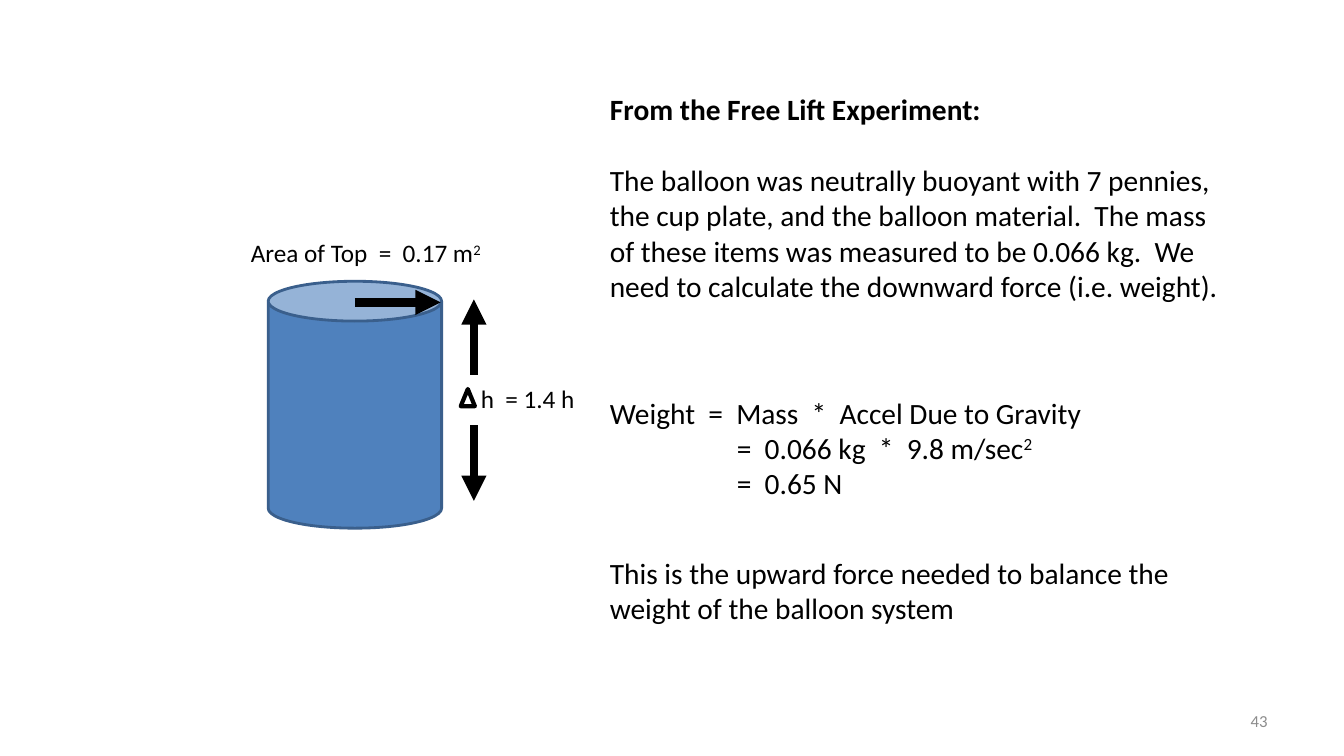
import pptx
import pptx.util
import pptx.dml.color
import pptx.enum.shapes
import pptx.enum.text
import pptx.oxml.ns
import lxml.etree

Inches = pptx.util.Inches
Pt = pptx.util.Pt
SHAPES = pptx.enum.shapes.MSO_SHAPE
ALIGN = pptx.enum.text.PP_ALIGN
ANCHOR = pptx.enum.text.MSO_ANCHOR

COLORS = {"ink": "000000", "cylinder": "4F81BD", "outline": "3A5F8C", "number": "8C8C8C"}
FONT = "Calibri"


def rgb(name):
    """Return the named colour."""
    return pptx.dml.color.RGBColor.from_string(COLORS[name])


def write(frame, lines, size, color="ink", bold=False, align=ALIGN.LEFT, anchor=ANCHOR.TOP):
    """Fill a text frame; the part of a line after a caret is superscript."""
    frame.word_wrap = True
    frame.vertical_anchor = anchor
    frame.text = "\n".join(line.partition("^")[0] for line in lines)
    for paragraph, line in zip(frame.paragraphs, lines):
        paragraph.alignment = align
        exponent = line.partition("^")[2]
        if exponent:
            raised = paragraph.add_run()
            raised.text = exponent
            raised._r.get_or_add_rPr().set("baseline", "30000")
        for run in paragraph.runs:
            run.font.name = FONT
            run.font.size = Pt(size)
            run.font.bold = bold
            run.font.color.rgb = rgb(color)


def add_text(shapes, box, lines, size, **style):
    """Add a text box at box and return its frame."""
    frame = shapes.add_textbox(*map(Inches, box)).text_frame
    write(frame, lines, size, **style)
    return frame


def add_arrow(shapes, start, end):
    """Add a thick black arrow from start to end."""
    arrow = shapes.add_connector(
        pptx.enum.shapes.MSO_CONNECTOR.STRAIGHT, *map(Inches, start + end))
    arrow.line.color.rgb = rgb("ink")
    arrow.line.width = Pt(6)
    qn = pptx.oxml.ns.qn
    lxml.etree.SubElement(arrow.line._get_or_add_ln(), qn("a:tailEnd"), type="triangle")
    lxml.etree.SubElement(arrow._element.spPr, qn("a:effectLst"))


def add_outlined(shapes, kind, box, line_color, line_width, fill=None):
    """Add an outlined preset shape, hollow unless a fill is named."""
    shape = shapes.add_shape(kind, *map(Inches, box))
    shape.shadow.inherit = False
    if fill:
        shape.fill.solid()
        shape.fill.fore_color.rgb = rgb(fill)
    else:
        shape.fill.background()
    shape.line.color.rgb = rgb(line_color)
    shape.line.width = Pt(line_width)
    return shape


def draw_cylinder(slide, left, top):
    """Draw the labelled cylinder diagram from its upper left corner."""
    shapes = slide.shapes.add_group_shape().shapes
    cylinder = add_outlined(shapes, SHAPES.CAN, (left + 0.27, top + 0.48, 1.72, 2.45),
                            "outline", 2, "cylinder")
    cylinder.adjustments[0] = 0.23
    add_text(shapes, (left, top, 3.11, 0.4), ["Area of Top  =  0.17 m^2"], 18)
    add_arrow(shapes, (left + 1.13, top + 0.69), (left + 1.98, top + 0.69))

    add_text(shapes, (left + 2.28, top + 1.44, 1.38, 0.4), ["h  = 1.4 h"], 18)
    add_outlined(shapes, SHAPES.ISOSCELES_TRIANGLE,
                 (left + 2.18, top + 1.55, 0.14, 0.17), "ink", 3)
    height_x, middle = left + 2.31, top + 1.66
    for direction in (-1, 1):
        add_arrow(shapes, (height_x, middle + direction * 0.25),
                  (height_x, middle + direction))


def write_explanation(slide, left, top):
    """Place the heading, experiment, calculation and conclusion in a column."""
    heading = slide.shapes.title
    heading.left, heading.top, heading.width, heading.height = map(
        Inches, (left, top, 6.23, 0.45))
    write(heading.text_frame, ["From the Free Lift Experiment:"], 21, bold=True)
    add_text(slide.shapes, (left, top + 0.71, 6.23, 1.86), [
        "The balloon was neutrally buoyant with 7 pennies, the cup plate, and the "
        "balloon material.  The mass of these items was measured to be 0.066 kg.  "
        "We need to calculate the downward force (i.e. weight)."], 21)
    calculation = add_text(slide.shapes, (left, top + 3.02, 5.05, 1.16), [
        "Weight  =  Mass  *  Accel Due to Gravity",
        "=  0.066 kg  *  9.8 m/sec^2",
        "=  0.65 N"], 21)
    for step in calculation.paragraphs[1:]:
        step._p.get_or_add_pPr().set("marL", str(Inches(1.26)))
    add_text(slide.shapes, (left, top + 4.61, 6.39, 0.81), [
        "This is the upward force needed to balance the weight of the balloon system"], 21)


def main():
    """Build the slide and save it."""
    deck = pptx.Presentation()
    deck.slide_width, deck.slide_height = Inches(13.33), Inches(7.5)
    slide = deck.slides.add_slide(deck.slide_layouts.get_by_name("Title Only"))
    draw_cylinder(slide, 2.39, 2.31)
    write_explanation(slide, 5.95, 0.85)
    add_text(slide.shapes, (9.56, 6.95, 3.11, 0.4), ["43"], 12, color="number",
             align=ALIGN.RIGHT, anchor=ANCHOR.MIDDLE)
    deck.save("out.pptx")


if __name__ == "__main__":
    main()
